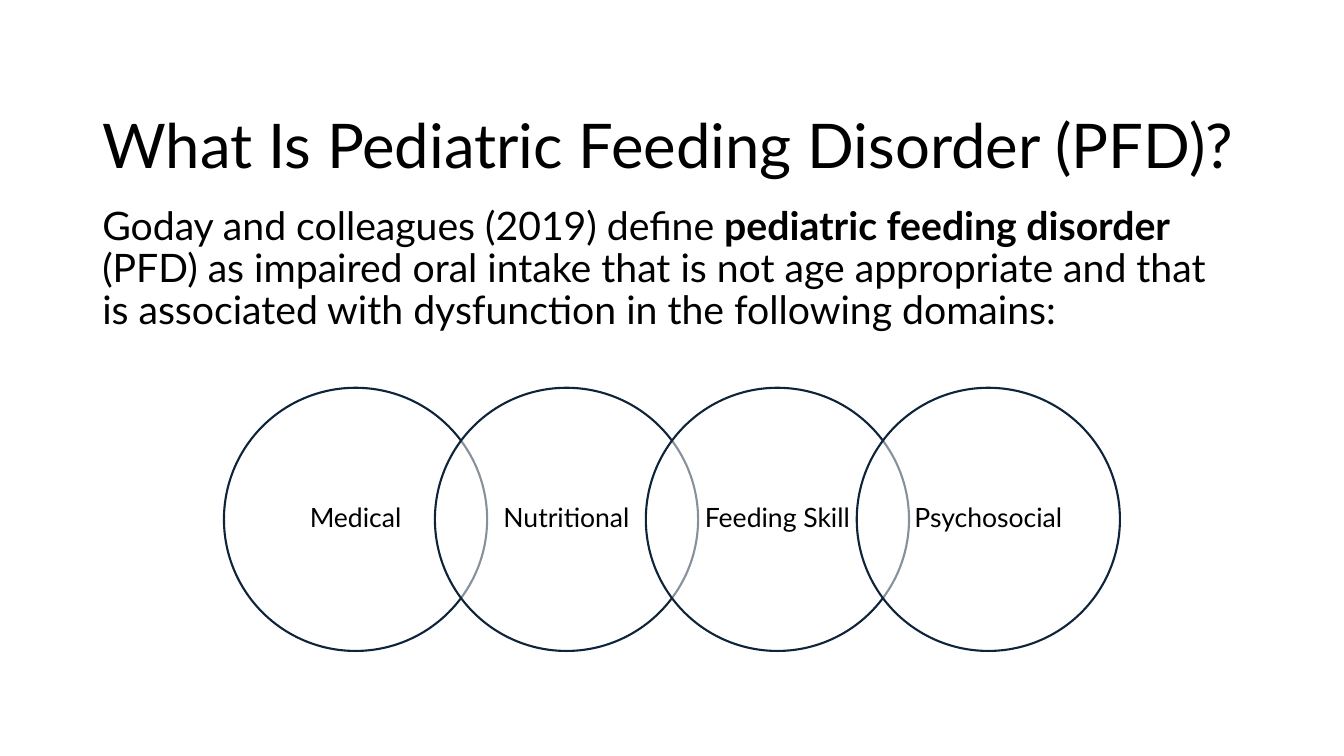
import pptx
import pptx.dml.color
import pptx.enum.shapes
import pptx.enum.text
import pptx.oxml.ns
import pptx.util
from lxml import etree

Pt = pptx.util.Pt
ALIGN = pptx.enum.text.PP_ALIGN
ANCHOR = pptx.enum.text.MSO_ANCHOR
FONT = "Lato"
INK = "000000"
DOMAINS = ["Medical", "Nutritional", "Feeding Skill", "Psychosocial"]


def rgb(value):
    """Return the colour for a hex string."""
    return pptx.dml.color.RGBColor.from_string(value)


def add_text(slide, box, runs, size=18, color=INK, align=ALIGN.LEFT,
             anchor=ANCHOR.TOP, inset=(7.2, 3.6), before=0, after=0):
    """Add a wrapped text box holding one paragraph of (text, bold) runs."""
    sp = slide.shapes.add_textbox(*map(Pt, box))
    tf = sp.text_frame
    tf.word_wrap = True
    tf.vertical_anchor = anchor
    tf.margin_left = tf.margin_right = Pt(inset[0])
    tf.margin_top = tf.margin_bottom = Pt(inset[1])
    p = tf.paragraphs[0]
    p.alignment = align
    p.line_spacing = 0.9
    p.space_before, p.space_after = Pt(before), Pt(after)
    for text, bold in runs:
        r = p.add_run()
        r.text = text
        r.font.name, r.font.size, r.font.bold = FONT, Pt(size), bold
        r.font.color.rgb = rgb(color)
    return sp


def add_title(slide, box):
    """Add the slide title, resting on the bottom of its box."""
    add_text(slide, box, [("What Is Pediatric Feeding Disorder (PFD)?", False)],
             size=44, anchor=ANCHOR.BOTTOM)


def add_definition(slide, box):
    """Add the definition paragraph with its bold term."""
    add_text(slide, box, [
        ("Goday and colleagues (2019) define ", False),
        ("pediatric feeding disorder ", True),
        ("(PFD) as impaired oral intake that is not age appropriate and that "
         "is associated with dysfunction in the following domains:", False),
    ], size=28, before=10)


def add_circle(slide, box, fill="FFFFFF", line="0D243B", opacity=50):
    """Add an outlined, translucent circle."""
    sp = slide.shapes.add_shape(pptx.enum.shapes.MSO_SHAPE.OVAL, *map(Pt, box))
    sp.shadow.inherit = False
    sp.fill.solid()
    sp.fill.fore_color.rgb = rgb(fill)
    sp.line.color.rgb = rgb(line)
    sp.line.width = Pt(1.5)
    qn = pptx.oxml.ns.qn
    color = sp.fill._xPr.find(qn("a:solidFill")).find(qn("a:srgbClr"))
    etree.SubElement(color, qn("a:alpha")).set("val", str(opacity * 1000))


def add_domains(slide, box):
    """Add a row of overlapping labelled circles that fills the box."""
    left, top, width, diameter = box
    step = (width - diameter) / (len(DOMAINS) - 1)
    label = diameter / 2 ** 0.5
    margin = (diameter - label) / 2
    for i, name in enumerate(DOMAINS):
        x = left + i * step
        add_circle(slide, (x, top, diameter, diameter))
        add_text(slide, (x + margin, top + margin, label, label),
                 [(name, False)], size=19, align=ALIGN.CENTER,
                 anchor=ANCHOR.MIDDLE, inset=(10, 2.4), after=6.65)


def main():
    """Build and save the slide."""
    prs = pptx.Presentation()
    prs.slide_width, prs.slide_height = Pt(960), Pt(540)
    slide = prs.slides.add_slide(prs.slide_layouts[6])
    add_title(slide, (66, 28.75, 828, 104.4))
    add_definition(slide, (66, 143.75, 828, 342.6))
    add_domains(slide, (160, 277, 640, 188))
    prs.save("out.pptx")


if __name__ == "__main__":
    main()
